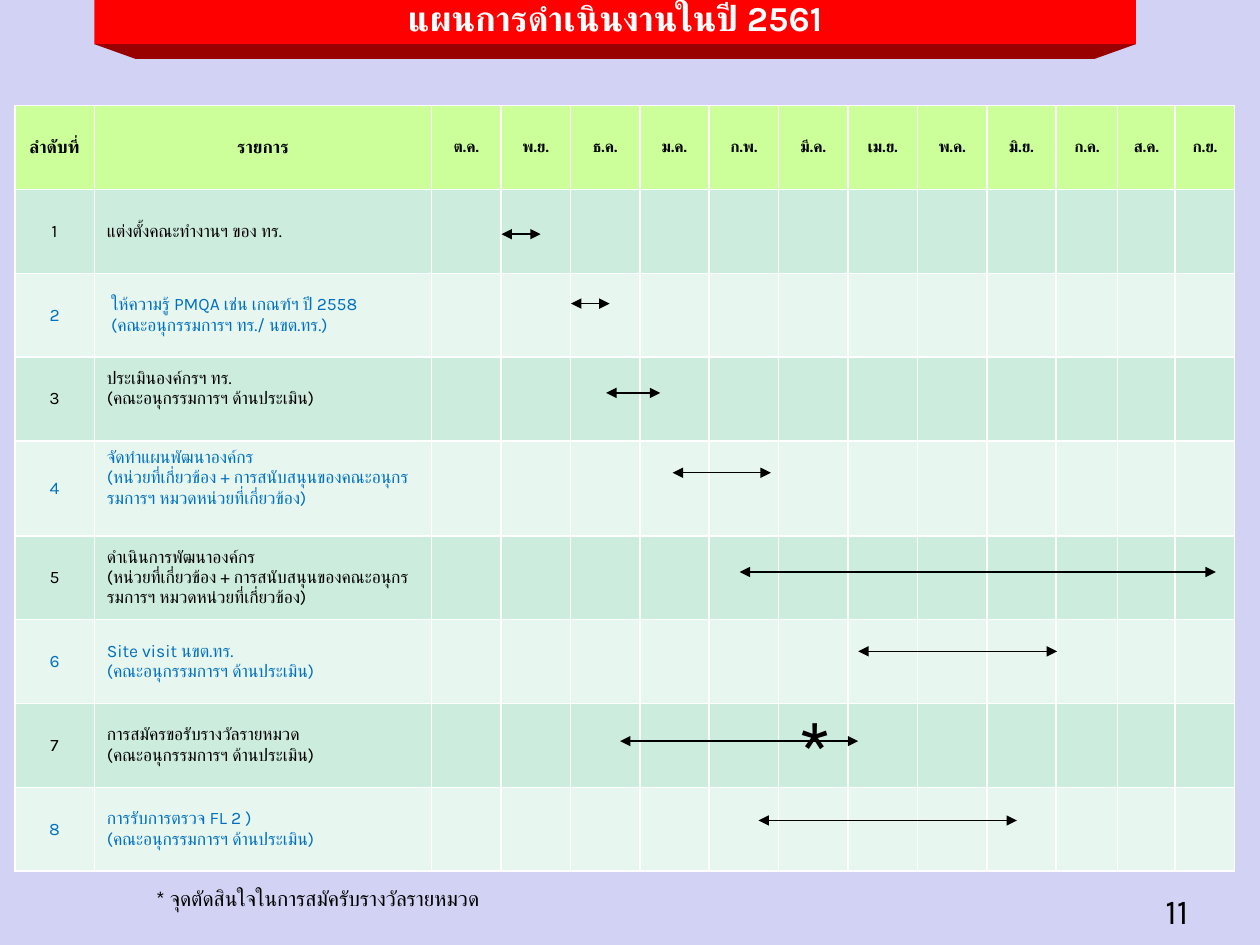
from lxml.etree import SubElement
from pptx import Presentation
from pptx.dml.color import RGBColor
from pptx.enum.shapes import MSO_CONNECTOR
from pptx.enum.text import MSO_ANCHOR, MSO_AUTO_SIZE, PP_ALIGN
from pptx.oxml.ns import qn
from pptx.util import Cm, Pt

COLORS = {
    "background": "D2D2F4", "banner": "FF0000", "fold": "990000",
    "header": "CCFF99", "odd": "CCECDE", "even": "E7F6EF",
    "black": "000000", "blue": "0070C0", "white": "FFFFFF",
}
MONTHS = ["ต.ค.", "พ.ย.", "ธ.ค.", "ม.ค.", "ก.พ.", "มี.ค.",
          "เม.ย.", "พ.ค.", "มิ.ย.", "ก.ค.", "ส.ค.", "ก.ย."]
ASSESSORS = "(คณะอนุกรรมการฯ ด้านประเมิน)"
SUPPORT = "(หน่วยที่เกี่ยวข้อง + การสนับสนุนของคณะอนุกรรมการฯ หมวดหน่วยที่เกี่ยวข้อง)"
TASKS = [
    ["แต่งตั้งคณะทำงานฯ ของ ทร."],
    ["ให้ความรู้ PMQA เช่น เกณฑ์ฯ ปี 2558", "(คณะอนุกรรมการฯ ทร./ นขต.ทร.)"],
    ["ประเมินองค์กรฯ ทร.", ASSESSORS],
    ["จัดทำแผนพัฒนาองค์กร", SUPPORT],
    ["ดำเนินการพัฒนาองค์กร", SUPPORT],
    ["Site visit นขต.ทร.", ASSESSORS],
    ["การสมัครขอรับรางวัลรายหมวด", ASSESSORS],
    ["การรับการตรวจ FL 2 )", ASSESSORS],
]
TASK_MARGINS = {
    2: {"margin_left": Cm(0.34)},
    3: {"margin_bottom": Cm(0.55)},
    4: {"margin_bottom": Cm(0.55)},
}
COLUMN_WIDTHS = [1.6, 6.8] + [1.4] * 9 + [1.24, 1.16, 1.2]
ROW_HEIGHTS = [1.69] * 4 + [1.85] + [1.69] * 4
SPANS = [
    (9.81, 10.6, 2.59), (11.21, 11.99, 3.99), (11.92, 13.01, 5.79),
    (13.26, 15.24, 7.4), (14.61, 24.21, 9.4), (17, 21.01, 11),
    (12.2, 17, 12.81), (14.99, 20.2, 14.41),
]


def color(name):
    """Return the named palette colour."""
    return RGBColor.from_string(COLORS[name])


def apply_format(target, values):
    """Set every attribute in values on target."""
    for name, value in values.items():
        setattr(target, name, value)


def paint(target, name):
    """Give a shape, cell or background a solid fill."""
    target.fill.solid()
    target.fill.fore_color.rgb = color(name)


def write(text_frame, lines, size, ink="black", bold=False, align=PP_ALIGN.LEFT, font="Karla"):
    """Write one formatted paragraph for each line."""
    for index, line in enumerate(lines):
        paragraph = text_frame.add_paragraph() if index else text_frame.paragraphs[0]
        paragraph.alignment = align
        run = paragraph.add_run()
        run.text = line
        apply_format(run.font, {"name": font, "size": Pt(size), "bold": bold})
        run.font.color.rgb = color(ink)
        SubElement(run.font._element, qn("a:cs"), typeface=font)


def add_banner(slide, left, top, width, height):
    """Place the title on a ribbon with a folded lower edge."""
    bottom, inset, depth = top + height, 0.84, 0.3
    builder = slide.shapes.build_freeform(Cm(left), Cm(bottom))
    builder.add_line_segments([
        (Cm(left + width), Cm(bottom)),
        (Cm(left + width - inset), Cm(bottom + depth)),
        (Cm(left + inset), Cm(bottom + depth)),
    ])
    fold = builder.convert_to_shape()
    fold.shadow.inherit = False
    paint(fold, "fold")
    fold.line.fill.background()

    title = slide.shapes.title
    apply_format(title, {"left": Cm(left), "top": Cm(top),
                         "width": Cm(width), "height": Cm(height)})
    paint(title, "banner")
    apply_format(title.text_frame, {
        "auto_size": MSO_AUTO_SIZE.NONE, "word_wrap": False,
        "vertical_anchor": MSO_ANCHOR.MIDDLE,
    })
    write(title.text_frame, ["แผนการดำเนินงานในปี 2561"], 20, "white", True, PP_ALIGN.CENTER)
    title.text_frame.paragraphs[0].line_spacing = 0.9


def add_schedule(slide, left, top):
    """Place the task table with its months."""
    frame = slide.shapes.add_table(
        len(ROW_HEIGHTS), len(COLUMN_WIDTHS), Cm(left), Cm(top),
        Cm(sum(COLUMN_WIDTHS)), Cm(sum(ROW_HEIGHTS)))
    table = frame.table
    for column, width in zip(table.columns, COLUMN_WIDTHS):
        column.width = Cm(width)
    for index, (row, height) in enumerate(zip(table.rows, ROW_HEIGHTS)):
        row.height = Cm(height)
        for cell in row.cells:
            paint(cell, "header" if index == 0 else "odd" if index % 2 else "even")
            cell.vertical_anchor = MSO_ANCHOR.MIDDLE
    for index, heading in enumerate(["ลำดับที่", "รายการ"] + MONTHS):
        write(table.cell(0, index).text_frame, [heading], 10 if index < 2 else 9,
              bold=True, align=PP_ALIGN.CENTER)
    for number, lines in enumerate(TASKS, 1):
        ink = "black" if number % 2 else "blue"
        write(table.cell(number, 0).text_frame, [str(number)], 10, ink, align=PP_ALIGN.CENTER)
        task = table.cell(number, 1)
        write(task.text_frame, lines, 10, ink)
        apply_format(task, TASK_MARGINS.get(number, {}))


def add_spans(slide, left, top):
    """Place the double-headed arrow of each task over the table."""
    for start, end, height in SPANS:
        arrow = slide.shapes.add_connector(
            MSO_CONNECTOR.STRAIGHT, Cm(left + start), Cm(top + height),
            Cm(left + end), Cm(top + height))
        arrow.line.width = Pt(0.75)
        arrow.line.color.rgb = color("black")
        line = arrow.line._get_or_add_ln()
        for tip in ("a:headEnd", "a:tailEnd"):
            SubElement(line, qn(tip), type="triangle")
        SubElement(arrow._element.spPr, qn("a:effectLst"))


def add_label(slide, box, text, size, wrap=False, **style):
    """Place a text box in the given box."""
    label = slide.shapes.add_textbox(*map(Cm, box))
    label.text_frame.word_wrap = wrap
    write(label.text_frame, [text], size, **style)


def main():
    """Build the work plan slide."""
    presentation = Presentation()
    apply_format(presentation, {"slide_width": Cm(25.4), "slide_height": Cm(19.05)})
    slide = presentation.slides.add_slide(presentation.slide_layouts[5])
    paint(slide.background, "background")
    add_banner(slide, 1.9, -0.08, 21, 0.97)
    add_schedule(slide, 0.3, 2.13)
    add_spans(slide, 0.3, 2.13)
    add_label(slide, (15.9, 14.1, 1.02, 1.8), "*", 36, font="Roboto")
    add_label(slide, (2.9, 17.73, 7.9, 0.76), "* จุดตัดสินใจในการสมัครับรางวัลรายหมวด", 12)
    add_label(slide, (22.71, 17.81, 1.5, 1.27), "11", 20, wrap=True, align=PP_ALIGN.RIGHT)
    presentation.save("out.pptx")


if __name__ == "__main__":
    main()
